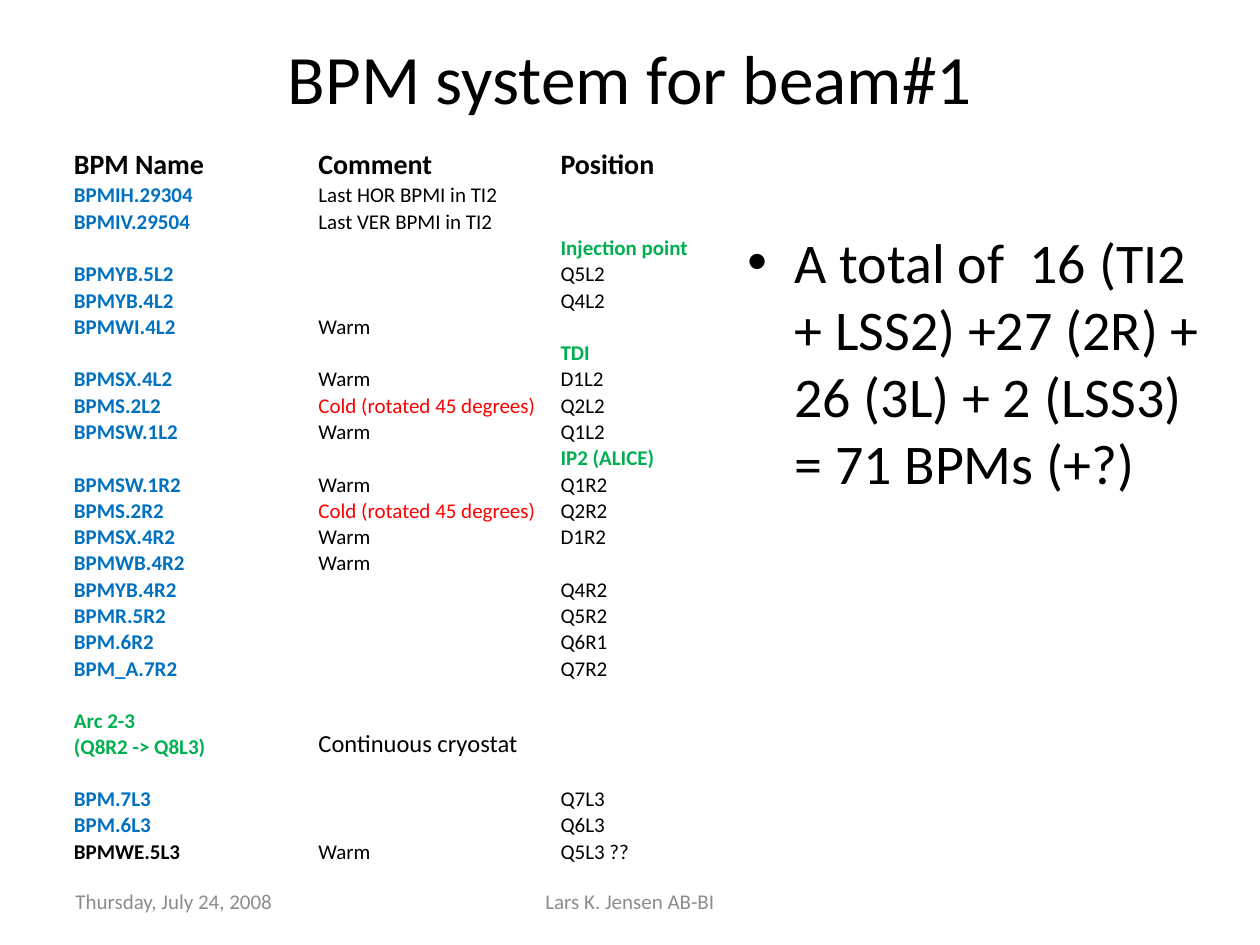
from lxml.etree import SubElement
from pptx import Presentation
from pptx.dml.color import RGBColor
from pptx.enum.text import MSO_ANCHOR as Anchor, MSO_AUTO_SIZE as AutoSize, PP_ALIGN as Align
from pptx.oxml.ns import qn
from pptx.util import Cm, Pt

BLACK = RGBColor(0x00, 0x00, 0x00)
GREY = RGBColor(0x8C, 0x8C, 0x8C)
BLUE = RGBColor(0x00, 0x70, 0xC0)
GREEN = RGBColor(0x00, 0xB0, 0x50)
RED = RGBColor(0xFF, 0x00, 0x00)

ARC = "Arc 2-3\n(Q8R2 -> Q8L3)"
CRYOSTAT = "Continuous cryostat"
ROTATED = "Cold (rotated 45 degrees)"
UNCONFIRMED = "BPMWE.5L3"
LANDMARKS = {"Injection point", "TDI", "IP2 (ALICE)", ARC}
HEADER = ("BPM Name", "Comment", "Position")
MONITORS = [
    ("BPMIH.29304", "Last HOR BPMI in TI2", ""),
    ("BPMIV.29504", "Last VER BPMI in TI2", ""),
    ("", "", "Injection point"),
    ("BPMYB.5L2", "", "Q5L2"),
    ("BPMYB.4L2", "", "Q4L2"),
    ("BPMWI.4L2", "Warm", ""),
    ("", "", "TDI"),
    ("BPMSX.4L2", "Warm", "D1L2"),
    ("BPMS.2L2", ROTATED, "Q2L2"),
    ("BPMSW.1L2", "Warm", "Q1L2"),
    ("", "", "IP2 (ALICE)"),
    ("BPMSW.1R2", "Warm", "Q1R2"),
    ("BPMS.2R2", ROTATED, "Q2R2"),
    ("BPMSX.4R2", "Warm", "D1R2"),
    ("BPMWB.4R2", "Warm", ""),
    ("BPMYB.4R2", "", "Q4R2"),
    ("BPMR.5R2", "", "Q5R2"),
    ("BPM.6R2", "", "Q6R1"),
    ("BPM_A.7R2", "", "Q7R2"),
    ("", "", ""),
    (ARC, CRYOSTAT, ""),
    ("", "", ""),
    ("BPM.7L3", "", "Q7L3"),
    ("BPM.6L3", "", "Q6L3"),
    (UNCONFIRMED, "Warm", "Q5L3 ??"),
]


def place(shape, left, top, width, height):
    """Move and size a shape, in centimetres."""
    shape.left, shape.top = Cm(left), Cm(top)
    shape.width, shape.height = Cm(width), Cm(height)


def format_text(frame, size, color=BLACK, bold=False, align=Align.LEFT):
    """Format every run of a text frame alike."""
    for paragraph in frame.paragraphs:
        paragraph.alignment = align
        for run in paragraph.runs:
            run.font.name = "Calibri"
            run.font.size = Pt(size)
            run.font.bold = bold
            run.font.color.rgb = color


def fill_placeholder(placeholder, text, box, size, align, anchor):
    """Write text into a template placeholder at a new place."""
    place(placeholder, *box)
    frame = placeholder.text_frame
    frame.text = text
    frame.auto_size = AutoSize.NONE
    frame.vertical_anchor = anchor
    frame.paragraphs[0].space_before = Pt(0)
    format_text(frame, size, align=align)


def add_footer(slide, text, left, width, align):
    """Add one grey footer text on the common footer line."""
    frame = slide.shapes.add_textbox(Cm(left), Cm(17.65), Cm(width), Cm(1.02)).text_frame
    frame.word_wrap = True
    frame.vertical_anchor = Anchor.MIDDLE
    frame.text = text
    format_text(frame, 12, GREY, align=align)


def cell_style(text, row, column):
    """Return size, colour and weight for a cell from its content and place."""
    if row == 0:
        return 16, BLACK, True
    if text in LANDMARKS:
        return 12, GREEN, True
    if column == 0:
        return 12, BLACK if text == UNCONFIRMED else BLUE, True
    if text == ROTATED:
        return 12, RED, False
    return 14 if text == CRYOSTAT else 12, BLACK, False


def fill_cell(cell, text, size, color, bold):
    """Write one unfilled, bottom-aligned table cell."""
    cell.fill.background()
    cell.vertical_anchor = Anchor.BOTTOM
    cell.margin_left = cell.margin_right = cell.margin_top = Cm(0.02)
    cell.margin_bottom = 0
    cell.text_frame.text = text
    format_text(cell.text_frame, size, color, bold)
    if not text:
        end = SubElement(cell.text_frame.paragraphs[0]._p, qn("a:endParaRPr"))
        end.set("sz", str(size * 100))


def add_monitor_table(slide):
    """Add the table of beam position monitors."""
    rows = [HEADER] + MONITORS
    frame = slide.shapes.add_table(len(rows), 3, Cm(1.47), Cm(2.97), Cm(12.73), Cm(14.4))
    table = frame.table
    table.first_row = table.horz_banding = False
    for column, width in zip(table.columns, (4.93, 4.88, 2.92)):
        column.width = Cm(width)
    for r, texts in enumerate(rows):
        table.rows[r].height = Cm(0.69 if r == 0 else 1.04 if ARC in texts else 0.53)
        for c, text in enumerate(texts):
            fill_cell(table.cell(r, c), text, *cell_style(text, r, c))


def main():
    """Build the slide and save it."""
    deck = Presentation()
    deck.slide_width, deck.slide_height = Cm(25.4), Cm(19.05)
    slide = deck.slides.add_slide(deck.slide_layouts[1])
    title, total = slide.placeholders
    fill_placeholder(title, "BPM system for beam#1", (1.27, 0.76, 22.86, 1.57),
                     39.6, Align.CENTER, Anchor.MIDDLE)
    fill_placeholder(total, "A total of  16 (TI2 + LSS2) +27 (2R) + 26 (3L) + 2 (LSS3) = 71 BPMs (+?)",
                     (14.81, 4.45, 9.96, 5.92), 32, Align.LEFT, Anchor.TOP)
    add_footer(slide, "Thursday, July 24, 2008", 1.27, 5.92, Align.LEFT)
    add_footer(slide, "Lars K. Jensen AB-BI", 8.68, 8.04, Align.CENTER)
    add_monitor_table(slide)
    deck.save("out.pptx")


if __name__ == "__main__":
    main()
